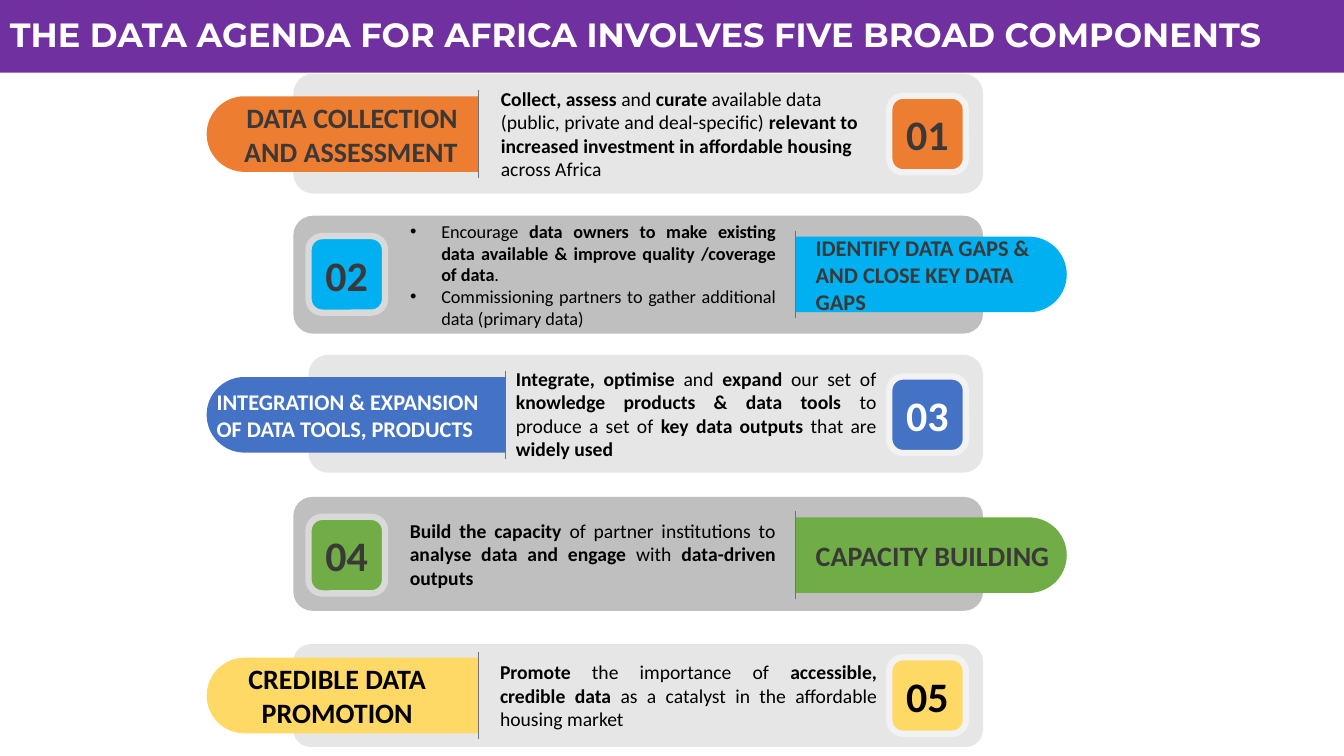
from dataclasses import dataclass
from math import cos, pi, sin

from lxml.etree import SubElement
from pptx import Presentation
from pptx.dml.color import RGBColor
from pptx.enum.shapes import MSO_CONNECTOR, MSO_SHAPE
from pptx.enum.text import MSO_ANCHOR, PP_ALIGN
from pptx.oxml.ns import qn
from pptx.util import Inches, Pt

PURPLE = RGBColor(0x70, 0x30, 0xA0)
WHITE = RGBColor(0xFF, 0xFF, 0xFF)
BLACK = RGBColor(0x00, 0x00, 0x00)
DARK = RGBColor(0x3B, 0x38, 0x38)
DIVIDER_GRAY = RGBColor(0x76, 0x71, 0x71)
LIGHT_PANEL = RGBColor(0xE7, 0xE6, 0xE6)
DARK_PANEL = RGBColor(0xBF, 0xBF, 0xBF)
LIGHT_BORDER = RGBColor(0xF2, 0xF2, 0xF2)
DARK_BORDER = RGBColor(0xD9, 0xD9, 0xD9)
ORANGE = RGBColor(0xED, 0x7D, 0x31)
CYAN = RGBColor(0x00, 0xB0, 0xF0)
BLUE = RGBColor(0x44, 0x72, 0xC4)
GREEN = RGBColor(0x70, 0xAD, 0x47)
YELLOW = RGBColor(0xFF, 0xD9, 0x66)

FIRST_CENTER = 1.33
ROW_STEP = 5.57 / 4
TAB_HEIGHT = 0.75
BADGE_SIZE = 0.76
DIVIDER_HEIGHT = 0.87
PANEL_RIGHT = 9.75
ARC_STEPS = 32


@dataclass
class Component:
    label: str
    details: list
    color: RGBColor
    panel_top: float
    panel_height: float
    panel_left: float = 2.91
    divider: float = 4.74
    text_color: RGBColor = DARK
    label_size: int = 20
    label_align: PP_ALIGN = PP_ALIGN.LEFT
    detail_size: int = 14
    detail_align: PP_ALIGN = PP_ALIGN.JUSTIFY


COMPONENTS = [
    Component(
        "DATA COLLECTION AND ASSESSMENT",
        ["**Collect, assess** and **curate** available data (public, private and deal-specific) "
         "**relevant to increased investment in affordable housing **across Africa"],
        ORANGE, 0.73, 1.19, label_align=PP_ALIGN.RIGHT, detail_align=PP_ALIGN.LEFT),
    Component(
        "IDENTIFY DATA GAPS & AND CLOSE KEY DATA GAPS",
        ["Encourage **data owners to make existing data available & improve quality "
         "/coverage of data**. ",
         "Commissioning partners to gather additional data (primary data)"],
        CYAN, 2.14, 1.17, divider=7.89, label_size=16, detail_size=13),
    Component(
        "INTEGRATION & EXPANSION OF DATA TOOLS, PRODUCTS",
        ["**Integrate, optimise **and **expand** our set of **knowledge products & data tools** "
         "to produce a set of **key data outputs** that are **widely used**"],
        BLUE, 3.52, 1.17, panel_left=3.06, divider=5.01, text_color=WHITE, label_size=16),
    Component(
        "CAPACITY BUILDING",
        ["**Build the capacity** of partner institutions to **analyse data and engage** with "
         "**data-driven outputs**"],
        GREEN, 4.93, 1.13, divider=7.89),
    Component(
        "CREDIBLE DATA PROMOTION",
        ["**Promote** the importance of **accessible, credible data** as a catalyst in the "
         "affordable housing market"],
        YELLOW, 6.39, 1.02, text_color=BLACK, label_align=PP_ALIGN.CENTER),
]


def style_shape(shape, fill, border=None):
    shape.shadow.inherit = False
    shape.fill.solid()
    shape.fill.fore_color.rgb = fill
    if border is None:
        shape.line.fill.background()
    else:
        shape.line.color.rgb = border
        shape.line.width = Pt(4.5)


def prepare_frame(shape, left=0.1, right=0.1):
    frame = shape.text_frame
    frame.word_wrap = True
    frame.vertical_anchor = MSO_ANCHOR.MIDDLE
    frame.margin_left, frame.margin_right = Inches(left), Inches(right)
    frame.margin_top = frame.margin_bottom = Inches(0.05)
    return frame


def format_font(font, size, color, bold=True, name="Calibri"):
    font.name = name
    font.size = Pt(size)
    font.bold = bold
    font.color.rgb = color


def write_label(shape, text, size, color, align, margins=(0.1, 0.1), name="Calibri"):
    frame = prepare_frame(shape, *margins)
    frame.text = text
    paragraph = frame.paragraphs[0]
    paragraph.alignment = align
    format_font(paragraph.runs[0].font, size, color, name=name)
    return paragraph


def add_bullet(paragraph):
    properties = paragraph._p.get_or_add_pPr()
    properties.set("marL", str(Inches(0.31)))
    properties.set("indent", str(Inches(-0.31)))
    SubElement(properties, qn("a:buFont"), typeface="Arial")
    SubElement(properties, qn("a:buChar"), char="•")


def add_panel(slide, component, tab_on_right):
    left = component.panel_left
    shape = slide.shapes.add_shape(
        MSO_SHAPE.ROUNDED_RECTANGLE, Inches(left), Inches(component.panel_top),
        Inches(PANEL_RIGHT - left), Inches(component.panel_height))
    style_shape(shape, DARK_PANEL if tab_on_right else LIGHT_PANEL)
    frame = prepare_frame(shape, *((1.1, 2) if tab_on_right else (2, 1)))
    for index, detail in enumerate(component.details):
        paragraph = frame.add_paragraph() if index else frame.paragraphs[0]
        paragraph.alignment = component.detail_align
        if len(component.details) > 1:
            add_bullet(paragraph)
        for part, text in enumerate(detail.split("**")):
            if text:
                run = paragraph.add_run()
                run.text = text
                format_font(run.font, component.detail_size, BLACK, bold=part % 2 == 1)


def add_tab(slide, component, center, tab_on_right):
    radius = TAB_HEIGHT / 2
    direction = 1 if tab_on_right else -1
    arc_center = 10.58 - radius if tab_on_right else 2.05 + radius
    angles = [pi * step / ARC_STEPS - pi / 2 for step in range(ARC_STEPS + 1)]
    points = [(Inches(arc_center + direction * radius * cos(angle)),
               Inches(center + radius * sin(angle))) for angle in angles]
    flat_edge = Inches(component.divider)
    points.append((flat_edge, Inches(center + radius)))
    builder = slide.shapes.build_freeform(flat_edge, Inches(center - radius))
    builder.add_line_segments(points, close=True)
    shape = builder.convert_to_shape()
    style_shape(shape, component.color)
    write_label(shape, component.label, component.label_size, component.text_color,
                component.label_align, (0.2, 0.1) if tab_on_right else (0.1, 0.2))


def add_badge(slide, component, number, center, tab_on_right):
    shape = slide.shapes.add_shape(
        MSO_SHAPE.ROUNDED_RECTANGLE, Inches(3.06 if tab_on_right else 8.82),
        Inches(center - BADGE_SIZE / 2), Inches(BADGE_SIZE), Inches(BADGE_SIZE))
    shape.adjustments[0] = 0.18
    style_shape(shape, component.color, DARK_BORDER if tab_on_right else LIGHT_BORDER)
    write_label(shape, f"{number:02}", 30, component.text_color, PP_ALIGN.CENTER, (0, 0))


def add_divider(slide, left, center):
    connector = slide.shapes.add_connector(
        MSO_CONNECTOR.STRAIGHT, Inches(left), Inches(center - DIVIDER_HEIGHT / 2),
        Inches(left), Inches(center + DIVIDER_HEIGHT / 2))
    connector.line.color.rgb = DIVIDER_GRAY
    connector.line.width = Pt(0.5)
    SubElement(connector._element.spPr, qn("a:effectLst"))


def add_title(slide, width):
    shape = slide.shapes.add_shape(MSO_SHAPE.RECTANGLE, 0, 0, width, Inches(0.72))
    style_shape(shape, PURPLE)
    paragraph = write_label(shape, "THE DATA AGENDA FOR AFRICA INVOLVES FIVE BROAD COMPONENTS",
                            24, WHITE, PP_ALIGN.LEFT, name="Montserrat")
    paragraph.line_spacing = 0.9


def main():
    presentation = Presentation()
    presentation.slide_width = Inches(13.33)
    presentation.slide_height = Inches(7.5)
    slide = presentation.slides.add_slide(presentation.slide_layouts[6])
    for index, component in enumerate(COMPONENTS):
        center = FIRST_CENTER + ROW_STEP * index
        tab_on_right = index % 2 == 1
        add_panel(slide, component, tab_on_right)
        add_tab(slide, component, center, tab_on_right)
        add_badge(slide, component, index + 1, center, tab_on_right)
        add_divider(slide, component.divider, center)
    add_title(slide, presentation.slide_width)
    presentation.save("out.pptx")


if __name__ == "__main__":
    main()
